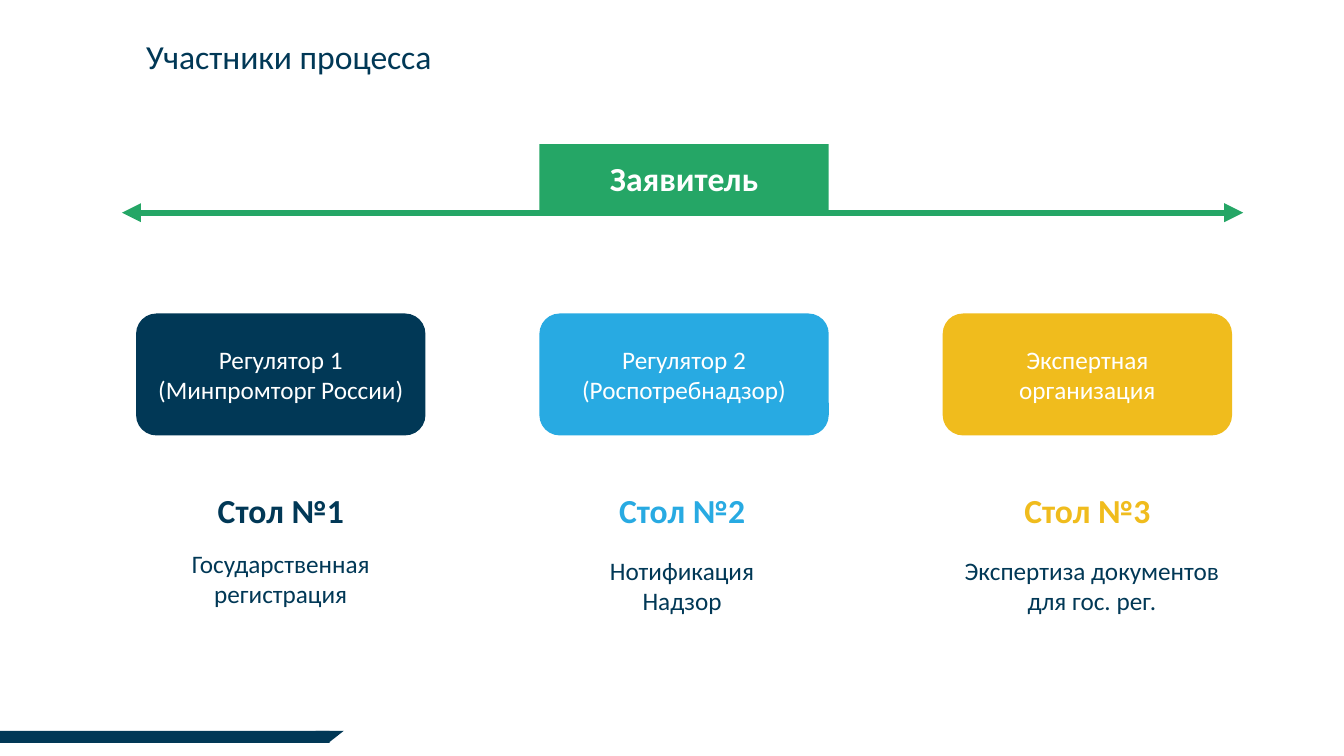
from dataclasses import dataclass

from lxml.etree import SubElement
from pptx import Presentation
from pptx.dml.color import RGBColor
from pptx.enum.shapes import MSO_CONNECTOR, MSO_SHAPE
from pptx.enum.text import MSO_ANCHOR, PP_ALIGN
from pptx.oxml.ns import qn
from pptx.util import Inches, Pt


@dataclass(frozen=True)
class Theme:
    navy: RGBColor = RGBColor.from_string("013856")
    blue: RGBColor = RGBColor.from_string("28AAE2")
    yellow: RGBColor = RGBColor.from_string("F0BC1D")
    green: RGBColor = RGBColor.from_string("25A666")
    white: RGBColor = RGBColor.from_string("FFFFFF")
    font: str = "Calibri"
    heading: Pt = Pt(24)
    body: Pt = Pt(18)


theme = Theme()
first_column, column_step, column_width = 1.35, 4, 2.87
row_height, card_height = 0.68, 1.21
title_top, applicant_top, card_top, table_top = 0.22, 1.43, 3.11, 4.72
axis_y = applicant_top + row_height


def write(holder, text, size, color, bold=False, align=PP_ALIGN.CENTER):
    frame = holder.text_frame
    frame.word_wrap = True
    frame.vertical_anchor = MSO_ANCHOR.MIDDLE
    frame.text = text
    for paragraph in frame.paragraphs:
        paragraph.alignment = align
        paragraph.font.name = theme.font
        paragraph.font.size = size
        paragraph.font.bold = bold
        paragraph.font.color.rgb = color


def add_block(preset, left, top, width, height, color):
    block = slide.shapes.add_shape(
        preset, Inches(left), Inches(top), Inches(width), Inches(height))
    block.shadow.inherit = False
    block.fill.solid()
    block.fill.fore_color.rgb = color
    block.line.fill.background()
    return block


presentation = Presentation()
presentation.slide_width = Inches(13.33)
presentation.slide_height = Inches(7.5)
slide = presentation.slides.add_slide(presentation.slide_layouts[5])

title = slide.shapes.title
title.left, title.top = Inches(first_column), Inches(title_top)
title.width, title.height = Inches(2 * column_step + column_width), Inches(row_height)
write(title, "Участники процесса", theme.heading, theme.navy, align=PP_ALIGN.LEFT)

footer_tip = add_block(MSO_SHAPE.ISOSCELES_TRIANGLE, 3.13, 7.25, 0.28, 0.11, theme.navy)
footer_tip.rotation = 180
add_block(MSO_SHAPE.RECTANGLE, 0, 7.25, 3.27, 0.12, theme.navy)

applicant_axis = slide.shapes.add_connector(
    MSO_CONNECTOR.STRAIGHT, Inches(1.21), Inches(axis_y), Inches(12.33), Inches(axis_y))
applicant_axis.line.color.rgb = theme.green
applicant_axis.line.width = Pt(4.5)
axis_line = applicant_axis.line._get_or_add_ln()
for arrowhead in ("a:headEnd", "a:tailEnd"):
    SubElement(axis_line, qn(arrowhead), type="triangle")
SubElement(applicant_axis._element.spPr, qn("a:effectLst"))

applicant = add_block(MSO_SHAPE.RECTANGLE, first_column + column_step, applicant_top,
                      column_width, row_height, theme.green)
write(applicant, "Заявитель", theme.heading, theme.white, bold=True)

participants = [
    ("Регулятор 1 (Минпромторг России)", theme.navy, 1.35,
     "Государственная регистрация", (1.35, 5.4, column_width)),
    ("Регулятор 2\n(Роспотребнадзор)", theme.blue, 5.33,
     "Нотификация\nНадзор", (5.33, 5.47, column_width)),
    ("Экспертная организация", theme.yellow, 9.35,
     "Экспертиза документов для гос. рег.", (9.32, 5.47, 3.02)),
]

for column, (role, color, table_left, duty, duty_place) in enumerate(participants):
    card = add_block(MSO_SHAPE.ROUNDED_RECTANGLE, first_column + column * column_step,
                     card_top, column_width, card_height, color)
    write(card, role, theme.body, theme.white)

    table_label = slide.shapes.add_textbox(
        Inches(table_left), Inches(table_top), Inches(column_width), Inches(row_height))
    write(table_label, f"Стол №{column + 1}", theme.heading, color, bold=True)

    duty_left, duty_top, duty_width = duty_place
    duty_label = slide.shapes.add_textbox(
        Inches(duty_left), Inches(duty_top), Inches(duty_width), Inches(row_height))
    write(duty_label, duty, theme.body, theme.navy)

presentation.save("out.pptx")
